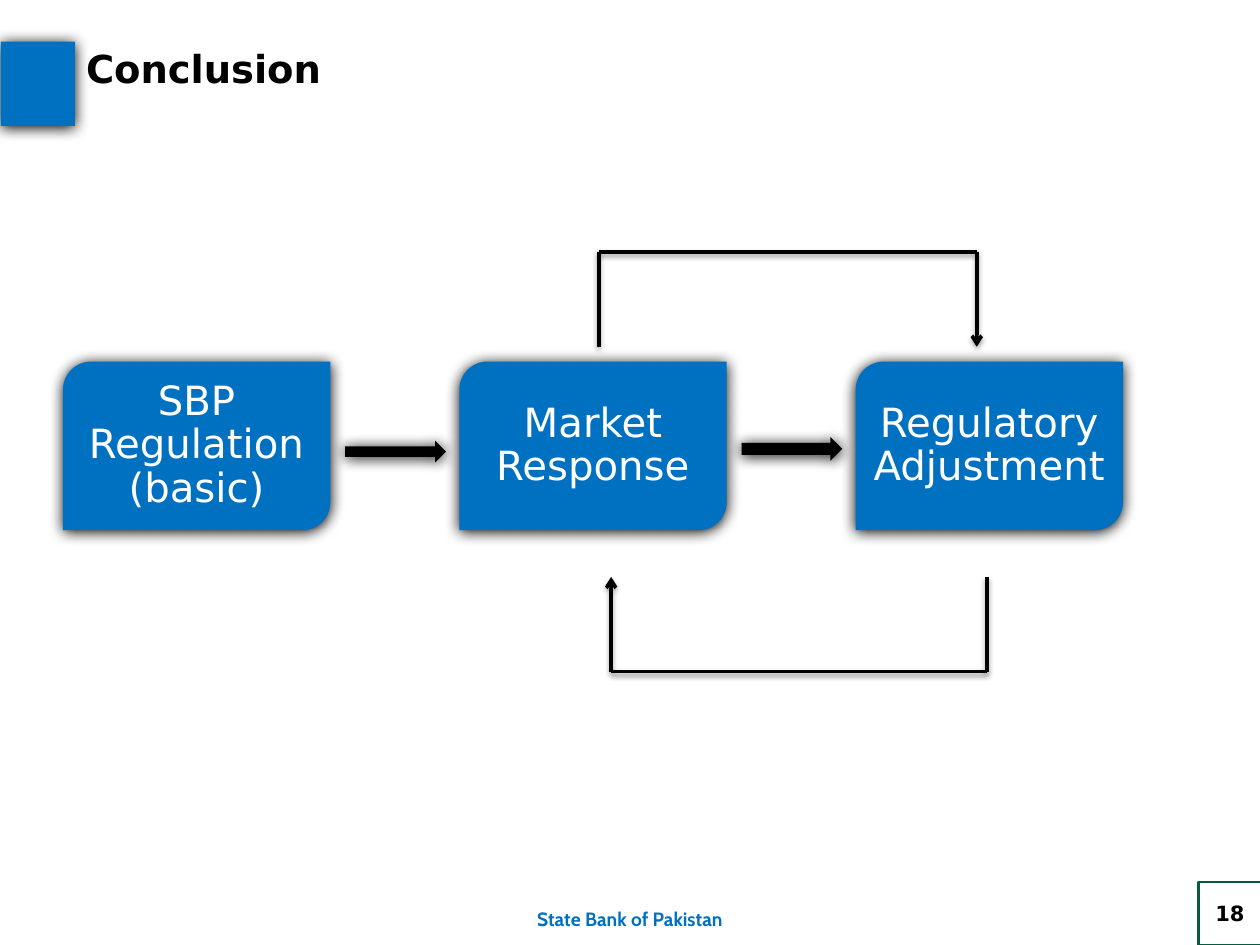
"""Build the conclusion slide: a regulation flow with two feedback loops."""
from itertools import pairwise

from lxml import etree
from pptx import Presentation
from pptx.dml.color import RGBColor
from pptx.enum import shapes, text
from pptx.oxml.ns import qn
from pptx.util import Cm, Pt

TITLE = "Conclusion"
STEPS = ["SBP Regulation (basic)", "Market Response", "Regulatory Adjustment"]
FOOTER = "State Bank of Pakistan"
PAGE_NUMBER = "18"

COLORS = {"blue": "0070C0", "black": "000000", "white": "FFFFFF", "green": "065A40"}
FONT = "DejaVu Sans"
KIND = shapes.MSO_SHAPE
MIDDLE = text.MSO_ANCHOR.MIDDLE
CENTER = text.PP_ALIGN.CENTER

STEP_LEFT, STEP_TOP, STEP_PITCH = 1.27, 7.29, 7.99
STEP_WIDTH, STEP_HEIGHT = 5.39, 3.4
ARROW_OFFSET, ARROW_WIDTH = 5.69, 2.03
ARROWS = [(8.89, 0.43), (8.81, 0.48)]  
LOOPS = [
    [(12.07, 6.99), (12.07, 5.08), (19.69, 5.08), (19.69, 6.99)],
    [(19.9, 11.63), (19.9, 13.54), (12.32, 13.54), (12.32, 11.63)],
]
SHAPE_SHADOW = {"blur": 8.5, "distance": 1, "opacity": 100}
LINE_SHADOW = {"blur": 3.1, "distance": 1.6, "opacity": 38}


def rgb(name):
    """Return the named colour."""
    return RGBColor.from_string(COLORS[name])


def add_shadow(item, blur, distance, opacity):
    """Give a shape or connector a soft black shadow falling downwards."""
    properties = item._element.spPr
    effects = properties.find(qn("a:effectLst"))
    if effects is None:
        effects = etree.SubElement(properties, qn("a:effectLst"))
    outer = etree.SubElement(
        effects, qn("a:outerShdw"), blurRad=str(Pt(blur)), dist=str(Pt(distance)),
        dir="5400000", algn="ctr", rotWithShape="0")
    color = etree.SubElement(outer, qn("a:srgbClr"), val=COLORS["black"])
    etree.SubElement(color, qn("a:alpha"), val=str(opacity * 1000))


def write(box, words, size, color="black", font=FONT, bold=False, align=CENTER,
          anchor=MIDDLE, spacing=None, margin=None):
    """Put one formatted paragraph in a box."""
    frame = box.text_frame
    frame.word_wrap = True
    frame.vertical_anchor = anchor
    if margin is not None:
        frame.margin_left = frame.margin_right = Cm(margin)
        frame.margin_top = frame.margin_bottom = Cm(margin)
    para = frame.paragraphs[0]
    para.alignment = align
    if spacing:
        para.line_spacing = spacing
    span = para.add_run()
    span.text = words
    span.font.size, span.font.bold, span.font.name = Pt(size), bold, font
    span.font.color.rgb = rgb(color)


def add_box(page, kind, place, fill=None, line=None, shadow=None):
    """Add a preset shape with its fill, outline and shadow."""
    box = page.shapes.add_shape(kind, *map(Cm, place))
    box.shadow.inherit = False
    if fill:
        box.fill.solid()
        box.fill.fore_color.rgb = rgb(fill)
    else:
        box.fill.background()
    if line:
        box.line.color.rgb = rgb(line)
        box.line.width = Pt(1.5)
    else:
        box.line.fill.background()
    if shadow:
        add_shadow(box, **shadow)
    return box


def add_loop(page, points):
    """Join the points with straight lines and an arrowhead on the last."""
    for start, end in pairwise(points):
        line = page.shapes.add_connector(
            shapes.MSO_CONNECTOR.STRAIGHT, *map(Cm, start + end))
        line.line.color.rgb = rgb("black")
        line.line.width = Pt(2)
        add_shadow(line, **LINE_SHADOW)
    etree.SubElement(line.line._get_or_add_ln(), qn("a:tailEnd"), type="arrow")


def main():
    """Build and save the deck."""
    deck = Presentation()
    deck.slide_width, deck.slide_height = Cm(25.4), Cm(19.05)
    page = deck.slides.add_slide(deck.slide_layouts[5])

    footer = add_box(page, KIND.RECTANGLE, (0, 17.78, 25.4, 1.27), fill="white")
    write(footer, FOOTER, 11, color="blue", font="Cabin", bold=True)
    footer.text_frame.margin_top = Cm(0.34)
    add_box(page, KIND.RECTANGLE, (0.02, 0.84, 1.49, 1.7), "blue", shadow=SHAPE_SHADOW)

    title = page.shapes.title
    title.left, title.top, title.width, title.height = map(Cm, (1.48, 0.76, 20.32, 1.2))
    write(title, TITLE, 22, bold=True, align=text.PP_ALIGN.LEFT,
          anchor=text.MSO_ANCHOR.BOTTOM)

    lefts = [STEP_LEFT + index * STEP_PITCH for index in range(len(STEPS))]
    for left, words in zip(lefts, STEPS):
        step = add_box(page, KIND.ROUND_2_DIAG_RECTANGLE,
                       (left, STEP_TOP, STEP_WIDTH, STEP_HEIGHT), "blue",
                       shadow=SHAPE_SHADOW)
        write(step, words, 23, color="white", spacing=0.9, margin=0.08)
    for left, (top, height) in zip(lefts, ARROWS):
        add_box(page, KIND.RIGHT_ARROW, (left + ARROW_OFFSET, top, ARROW_WIDTH, height),
                "black", shadow=SHAPE_SHADOW)
    for points in LOOPS:
        add_loop(page, points)

    number = add_box(page, KIND.RECTANGLE, (24.16, 17.78, 1.27, 1.27), line="green")
    write(number, PAGE_NUMBER, 12, bold=True, margin=0)
    deck.save("out.pptx")


if __name__ == "__main__":
    main()
